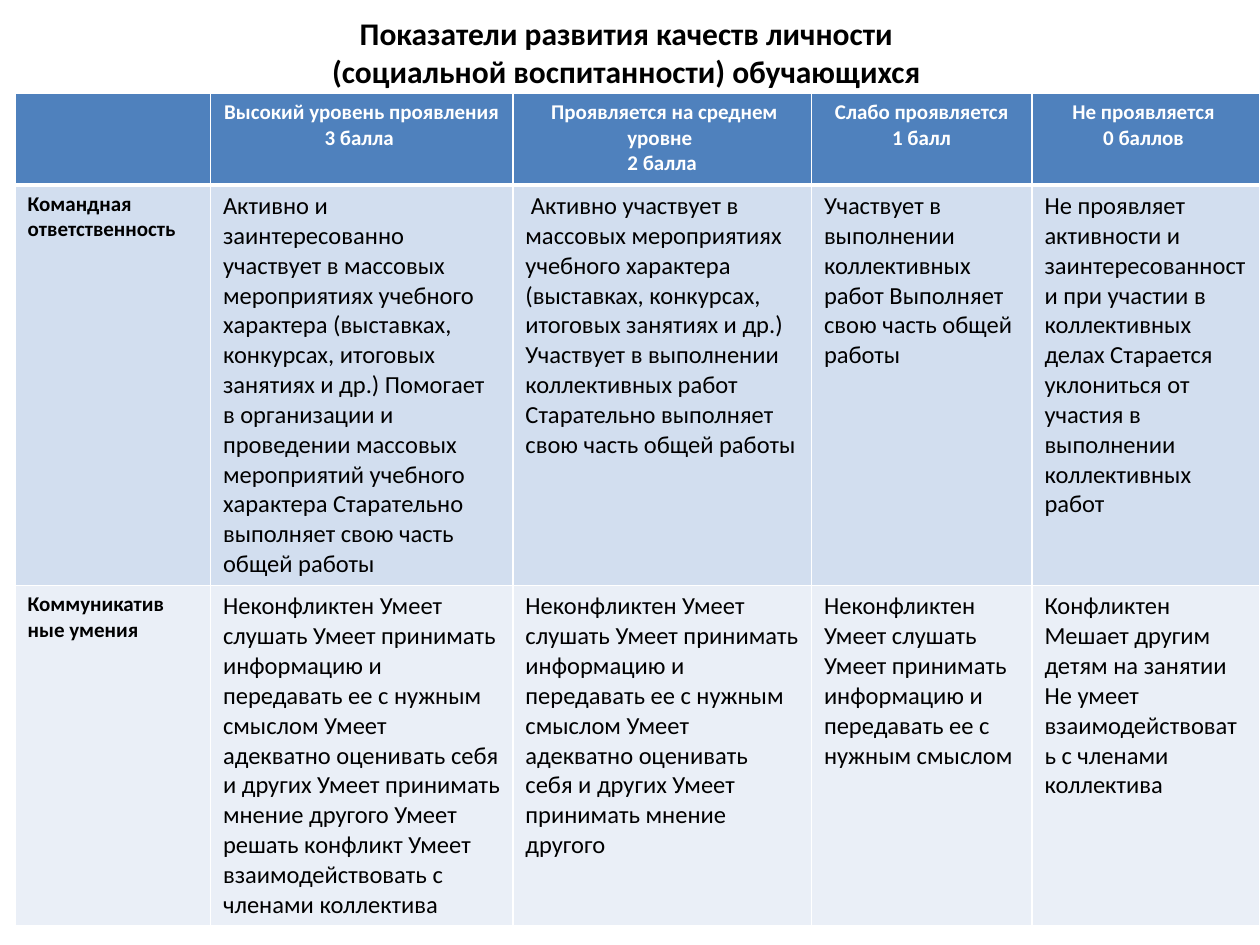
from lxml import etree
from pptx import Presentation
from pptx.dml.color import RGBColor
from pptx.enum.text import MSO_ANCHOR, MSO_AUTO_SIZE, PP_ALIGN
from pptx.oxml.ns import qn
from pptx.util import Inches, Pt

MID, TOP = MSO_ANCHOR.MIDDLE, MSO_ANCHOR.TOP
LEFT, CENTER = PP_ALIGN.LEFT, PP_ALIGN.CENTER
NO_FIT = MSO_AUTO_SIZE.NONE
WIDE, HIGH = 10, 7.5
FONT = "Calibri"
HUES = {"head": "4F81BD", "odd": "D2DEEF", "even": "EAEFF7",
        "white": "FFFFFF", "black": "000000"}
COLS = [1.55, 2.4, 2.37, 1.75, 1.81]
ROWS = [0.73, 3.13, 2.67]
BANDS = ["head", "odd", "even"]
TITLE = "Показатели развития качеств личности \v(социальной воспитанности) обучающихся "
CALM = "Неконфликтен Умеет слушать Умеет принимать информацию и передавать ее с нужным смыслом"
FAIR = CALM + " Умеет адекватно оценивать себя и других Умеет принимать мнение другого"
EVENTS = "(выставках, конкурсах, итоговых занятиях и др.)"
DUTY = "Старательно выполняет свою часть общей работы"
CELLS = [
    ["",
     "Высокий уровень проявления \n3 балла ",
     " Проявляется на среднем уровне \n2 балла",
     "Слабо проявляется\n 1 балл ",
     "Не проявляется \n0 баллов "],
    ["Командная ответственность",
     "Активно и заинтересованно участвует в массовых мероприятиях учебного характера "
     f"{EVENTS} Помогает в организации и проведении массовых мероприятий "
     f"учебного характера {DUTY}",
     f" Активно участвует в массовых мероприятиях учебного характера {EVENTS} "
     f"Участвует в выполнении коллективных работ {DUTY}",
     "Участвует в выполнении коллективных работ Выполняет свою часть общей работы",
     "Не проявляет активности и заинтересованности при участии в коллективных делах "
     "Старается уклониться от участия в выполнении коллективных работ"],
    ["Коммуникатив\nные умения",
     FAIR + " Умеет решать конфликт Умеет взаимодействовать с членами коллектива",
     FAIR,
     CALM,
     "Конфликтен Мешает другим детям на занятии Не умеет взаимодействовать "
     "с членами коллектива"],
]


def paint(hue):
    """Return the named colour."""
    return RGBColor.from_string(HUES[hue])


def write(frame, text, size=14, bold=False, hue="black", align=LEFT, anchor=TOP):
    """Put formatted text into a frame."""
    frame.text = text
    frame.word_wrap = True
    frame.vertical_anchor = anchor
    for para in frame.paragraphs:
        para.alignment = align
        for run in para.runs:
            font = run.font
            font.name, font.size, font.bold = FONT, Pt(size), bold
            font.color.rgb = paint(hue)


def edge(cell, sides):
    """Draw white cell borders from a dict of side and width."""
    props = cell._tc.get_or_add_tcPr()
    for spot, (side, width) in enumerate(sides.items()):
        line = etree.Element(qn(f"a:ln{side}"), w=str(Pt(width)))
        fill = etree.SubElement(line, qn("a:solidFill"))
        etree.SubElement(fill, qn("a:srgbClr"), val=HUES["white"])
        props.insert(spot, line)


def head(slide, box):
    """Place the slide title in its box."""
    title = slide.shapes.title
    title.left, title.top, title.width, title.height = map(Inches, box)
    write(title.text_frame, TITLE, size=18, bold=True, align=CENTER, anchor=MID)
    title.text_frame.auto_size = NO_FIT


def grid(slide, box):
    """Place the table of levels, its tracks sharing out the box."""
    table = slide.shapes.add_table(len(ROWS), len(COLS), *map(Inches, box)).table
    for col, part in zip(table.columns, COLS):
        col.width = Inches(box[2] * part / sum(COLS))
    for row, part in zip(table.rows, ROWS):
        row.height = Inches(box[3] * part / sum(ROWS))
    for r, texts in enumerate(CELLS):
        for c, text in enumerate(texts):
            cell = table.cell(r, c)
            top = r == 0
            label = top or c == 0
            write(cell.text_frame, text, size=12 if label else 14, bold=label,
                  hue="white" if top else "black", align=CENTER if top else LEFT)
            cell.fill.solid()
            cell.fill.fore_color.rgb = paint(BANDS[r])
            edge(cell, {"L": 1, "R": 1, "T": 3 if r == 1 else 1, "B": 3 if top else 1})


def main():
    """Build and save the slide."""
    deck = Presentation()
    deck.slide_width, deck.slide_height = Inches(WIDE), Inches(HIGH)
    slide = deck.slides.add_slide(deck.slide_layouts[5])
    head(slide, (0.05 * WIDE, 0.04 * HIGH, 0.9 * WIDE, 0.03 * HIGH))
    left, top = 0.012 * WIDE, 0.74
    grid(slide, (left, top, WIDE - left, 0.87 * HIGH))
    deck.save("out.pptx")


if __name__ == "__main__":
    main()
